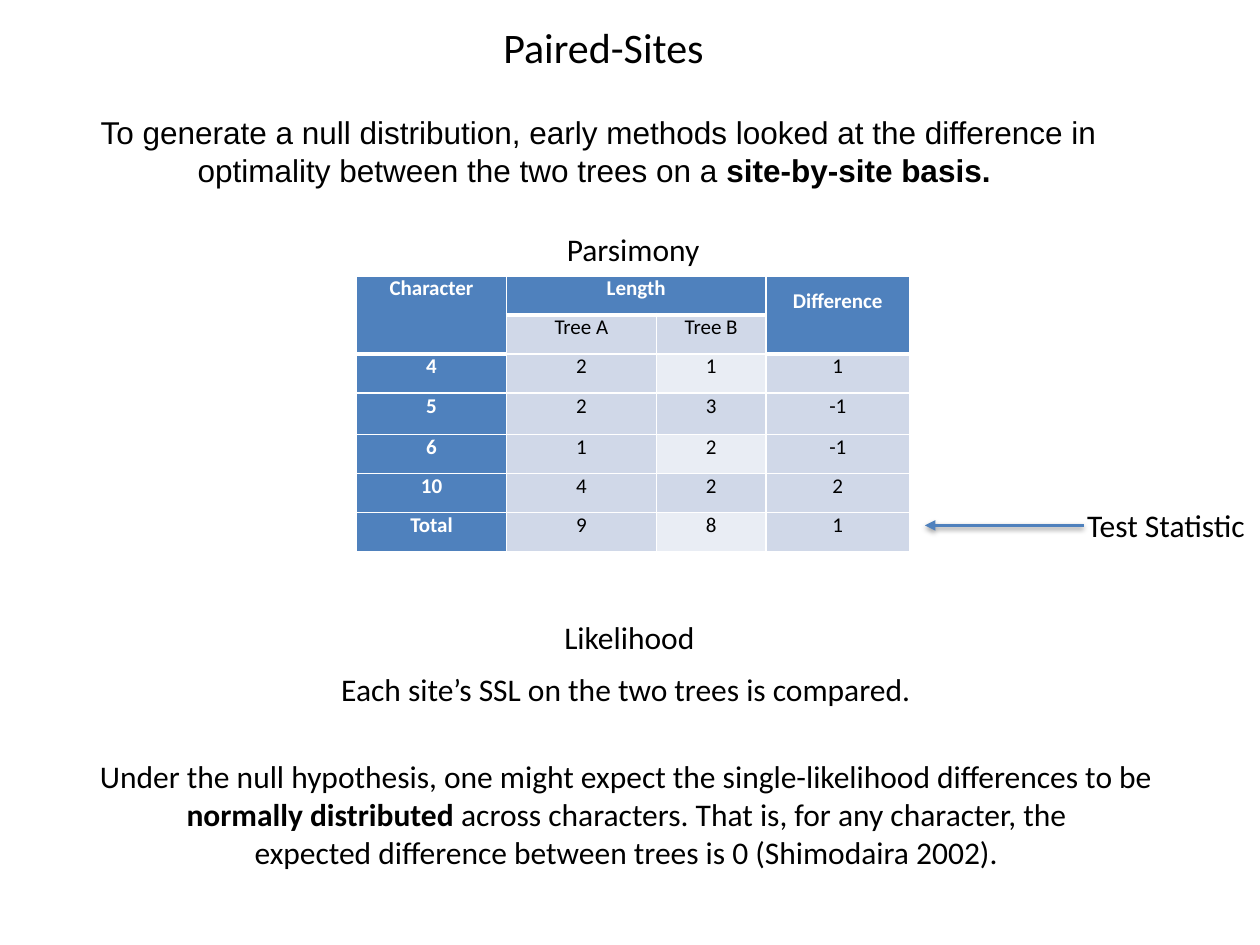
import pptx
import pptx.util
import pptx.dml.color
import pptx.enum.shapes
import pptx.enum.text
import pptx.oxml
import pptx.oxml.ns
from pptx.util import Inches

COLORS = {
    "white": "FFFFFF",
    "black": "000000",
    "header": "4F81BD",
    "band": "D0D8E8",
    "light": "E9EDF4",
}
CENTER = pptx.enum.text.PP_ALIGN.CENTER
LEFT = pptx.enum.text.PP_ALIGN.LEFT

COLUMN_WIDTHS = [1.19, 1.19, 0.87, 1.14]
ROW_HEIGHTS = [0.31, 0.31, 0.31, 0.33, 0.31, 0.31, 0.31]
SITE_LENGTHS = [
    ["Character", "Length", "", "Difference"],
    ["", "Tree A", "Tree B", ""],
    ["4", "2", "1", "1"],
    ["5", "2", "3", "-1"],
    ["6", "1", "2", "-1"],
    ["10", "4", "2", "2"],
    ["Total", "9", "8", "1"],
]


def rgb(name):
    return pptx.dml.color.RGBColor.from_string(COLORS[name])


def style_font(font, size, color="black", bold=False, face="Calibri"):
    font.name = face
    font.size = pptx.util.Pt(size)
    font.bold = bold
    font.color.rgb = rgb(color)


def add_text(slide, box, lines, size=18, face="Calibri", aligns=None, middle=False):
    """Each line is a list of (text, bold) runs."""
    frame = slide.shapes.add_textbox(*map(Inches, box)).text_frame
    frame.word_wrap = False
    frame.auto_size = pptx.enum.text.MSO_AUTO_SIZE.SHAPE_TO_FIT_TEXT
    if middle:
        frame.vertical_anchor = pptx.enum.text.MSO_ANCHOR.MIDDLE
    for number, runs in enumerate(lines):
        paragraph = frame.add_paragraph() if number else frame.paragraphs[0]
        paragraph.alignment = aligns[number] if aligns else CENTER
        for text, bold in runs:
            run = paragraph.add_run()
            run.text = text
            style_font(run.font, size, bold=bold, face=face)


def set_borders(cell, widths):
    """Widths in points, in the order left, right, top, bottom."""
    properties = cell._tc.get_or_add_tcPr()
    for place, (side, width) in enumerate(zip("LRTB", widths)):
        properties.insert(place, pptx.oxml.parse_xml(
            f'<a:ln{side} {pptx.oxml.ns.nsdecls("a")} w="{pptx.util.Pt(width)}">'
            f'<a:solidFill><a:srgbClr val="{COLORS["white"]}"/></a:solidFill>'
            f'</a:ln{side}>'))


def is_header(row, column):
    return row == 0 or (row == 1 and column in (0, 3))


def add_length_table(slide):
    table = slide.shapes.add_table(
        len(ROW_HEIGHTS), len(COLUMN_WIDTHS), Inches(2.83), Inches(2.19),
        Inches(sum(COLUMN_WIDTHS)), Inches(sum(ROW_HEIGHTS))).table
    for column, width in zip(table.columns, COLUMN_WIDTHS):
        column.width = Inches(width)
    for row, height in zip(table.rows, ROW_HEIGHTS):
        row.height = Inches(height)

    # Heading spans
    table.cell(0, 0).merge(table.cell(1, 0))
    table.cell(0, 1).merge(table.cell(0, 2))
    table.cell(0, 3).merge(table.cell(1, 3))

    for r, values in enumerate(SITE_LENGTHS):
        for c, value in enumerate(values):
            cell = table.cell(r, c)
            header = is_header(r, c)
            strong = header or c == 0
            light = c == 2 and r >= 2 and r % 2 == 0
            cell.fill.solid()
            cell.fill.fore_color.rgb = rgb(
                "header" if strong else "light" if light else "band")
            below_header = not header and r > 0 and is_header(r - 1, c)
            set_borders(cell, (1, 1, 3 if below_header else 1, 3 if header else 1))
            cell.margin_left = cell.margin_right = Inches(0.07)
            cell.margin_top = cell.margin_bottom = 0
            if value:
                cell.text_frame.text = value
                paragraph = cell.text_frame.paragraphs[0]
                paragraph.alignment = CENTER
                style_font(paragraph.runs[0].font, 12,
                           "white" if strong else "black", strong)
    table.cell(0, 3).text_frame.paragraphs[0].line_spacing = 1.5


def add_arrow(slide, start, end):
    arrow = slide.shapes.add_connector(
        pptx.enum.shapes.MSO_CONNECTOR.STRAIGHT, *map(Inches, start + end))
    arrow.line.color.rgb = rgb("header")
    arrow.line.width = pptx.util.Pt(2)
    namespace = pptx.oxml.ns.nsdecls("a")
    arrow.line._get_or_add_ln().append(
        pptx.oxml.parse_xml(f'<a:tailEnd {namespace} type="triangle"/>'))
    # Soft shadow straight below the line
    arrow._element.spPr.append(pptx.oxml.parse_xml(
        f'<a:effectLst {namespace}><a:outerShdw blurRad="{pptx.util.Pt(3.1)}" '
        f'dist="{pptx.util.Pt(1.6)}" dir="5400000" rotWithShape="0">'
        f'<a:srgbClr val="{COLORS["black"]}"><a:alpha val="38000"/></a:srgbClr>'
        f'</a:outerShdw></a:effectLst>'))


def main():
    deck = pptx.Presentation()
    deck.slide_width, deck.slide_height = Inches(10), Inches(7.5)
    slide = deck.slides.add_slide(deck.slide_layouts[6])

    # Parsimony table
    add_length_table(slide)

    # Introduction and title
    add_text(slide, (0.7, 0.84, 8.25, 0.71), [
        [("To generate a null distribution, early methods looked at the difference in", False)],
        [("optimality between the two trees on a ", False), ("site-by-site basis. ", True)],
    ], face="Arial", aligns=[LEFT, CENTER], middle=True)
    add_text(slide, (3.89, 0.12, 1.8, 0.5), [[("Paired-Sites", False)]], size=24)

    # Single-line labels
    for box, label in [
        ((4.4, 1.78, 1.26, 0.4), "Parsimony"),
        ((4.38, 4.86, 1.25, 0.4), "Likelihood"),
        ((2.61, 5.27, 4.77, 0.4), "Each site’s SSL on the two trees is compared."),
        ((8.53, 3.97, 1.47, 0.4), "Test Statistic"),
    ]:
        add_text(slide, box, [[(label, False)]], aligns=[LEFT])

    # Null hypothesis
    add_text(slide, (0.64, 5.96, 8.72, 1.01), [
        [("Under the null hypothesis, one might expect the single-likelihood differences to be ", False)],
        [("normally distributed", True),
         (" across characters. That is, for any character, the ", False)],
        [("expected difference between trees is 0 (Shimodaira 2002). ", False)],
    ])

    # Pointer from the test statistic to the total difference
    add_arrow(slide, (8.6, 4.17), (7.34, 4.17))

    deck.save("out.pptx")


if __name__ == "__main__":
    main()
